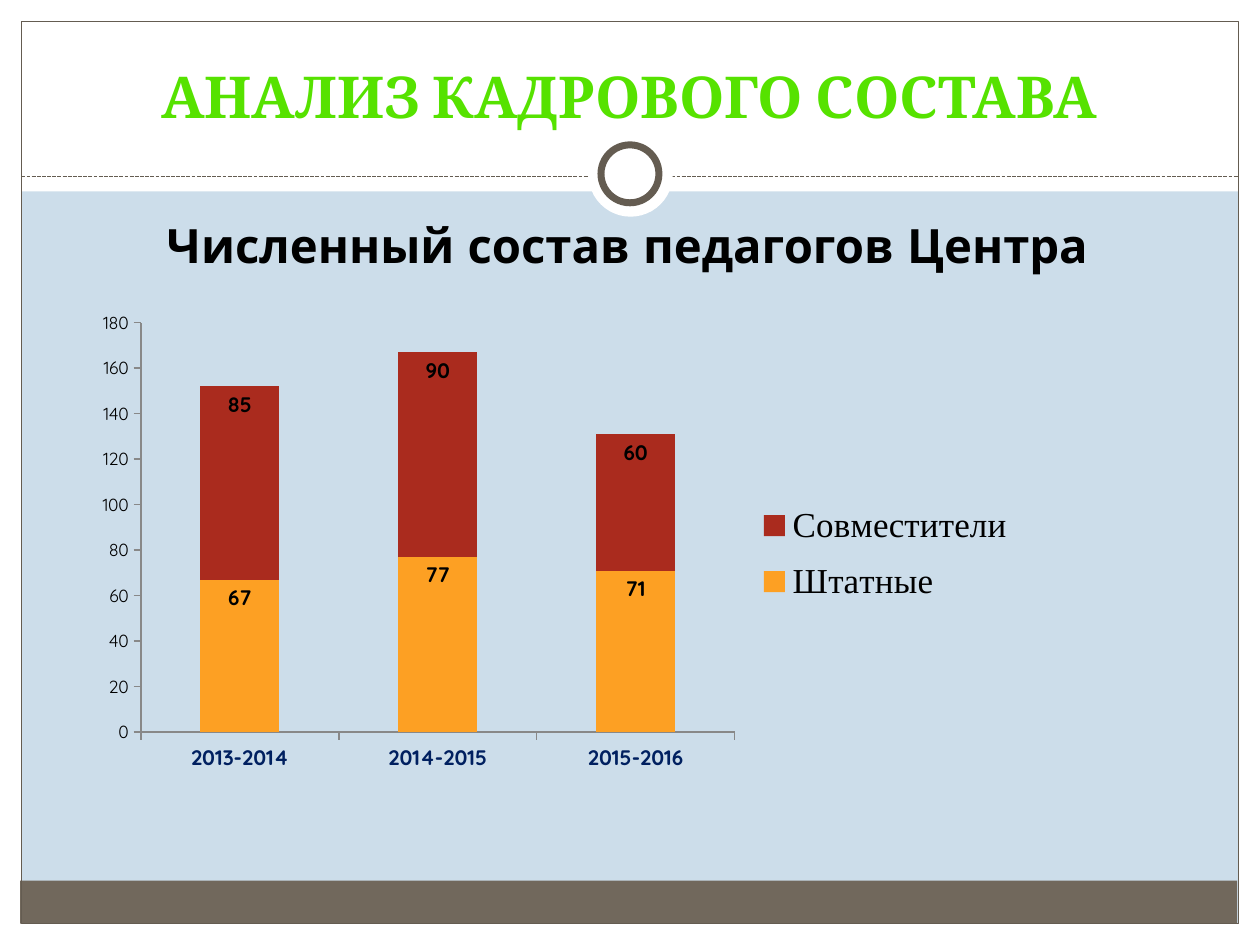
from pptx import Presentation
from pptx.chart.data import CategoryChartData
from pptx.dml.color import RGBColor
from pptx.enum.chart import XL_CHART_TYPE, XL_LABEL_POSITION, XL_LEGEND_POSITION, XL_TICK_MARK
from pptx.enum.dml import MSO_LINE
from pptx.enum.shapes import MSO_CONNECTOR, MSO_SHAPE
from pptx.enum.text import MSO_ANCHOR, PP_ALIGN
from pptx.oxml import parse_xml
from pptx.oxml.ns import nsdecls, qn
from pptx.util import Inches, Pt

RECT, OVAL = MSO_SHAPE.RECTANGLE, MSO_SHAPE.OVAL
STACKED = XL_CHART_TYPE.COLUMN_STACKED
INSIDE_END = XL_LABEL_POSITION.INSIDE_END
LEGEND_RIGHT = XL_LEGEND_POSITION.RIGHT
TICK_OUT = XL_TICK_MARK.OUTSIDE
CENTER = PP_ALIGN.CENTER

TITLE = "АНАЛИЗ КАДРОВОГО СОСТАВА"
SUBTITLE = "Численный состав педагогов Центра"
YEARS = ["2013-2014", "2014-2015", "2015-2016"]
STAFF = [
    ("Штатные", (67, 77, 71), "staff"),
    ("Совместители", (85, 90, 60), "part_time"),
]

THEME = {
    "color": {
        "background": "CCDDEA", "white": "FFFFFF", "footer": "71685C", "frame": "645C51",
        "title": "56E200", "text": "000000", "years": "002060", "axis": "888888",
        "staff": "FDA023", "part_time": "AA2B1E",
    },
    "font": {"title": "Cambria", "body": "Quicksand", "legend": "Times New Roman"},
    "size": {"title": 33, "subtitle": 27, "legend": 20, "label": 12, "axis": 10},
}

FRAME = [
    (RECT, (0, 7.33, 10, 0.17), "white", None),
    (RECT, (0, 0, 10, 1.52), "white", None),
    (RECT, (0, 0, 0.17, 7.5), "white", None),
    (RECT, (9.83, 0, 0.17, 7.5), "white", None),
    (RECT, (0.16, 6.99, 9.66, 0.34), "footer", None),
    (RECT, (0.17, 0.17, 9.66, 7.16), None, 0.75),
]
RING = [
    (OVAL, (4.67, 1.05, 0.67, 0.67), "white", None),
    (OVAL, (4.77, 1.15, 0.46, 0.46), "white", 4),
]
DIVIDER = (0.17, 1.4, 9.83, 1.4)
TITLE_BOX = (0.33, 0.25, 9.33, 0.83)
SUBTITLE_BOX = (0.33, 1.67, 9.3, 5)
CHART_BOX = (0.67, 2.41, 7.48, 3.78)
PLOT_LAYOUT = {"x": 0.06, "y": 0.04, "w": 0.63, "h": 0.86}
LEGEND_LAYOUT = {"x": 0.71, "y": 0.39, "w": 0.28, "h": 0.27}


def color(name):
    return RGBColor.from_string(THEME["color"][name])


def inches(values):
    return [Inches(value) for value in values]


def style_font(font, face, size, tint="text", bold=False):
    font.name = THEME["font"][face]
    font.size = Pt(THEME["size"][size])
    font.bold = bold
    font.color.rgb = color(tint)


def add_shapes(page, items):
    for kind, box, fill, line_width in items:
        shape = page.shapes.add_shape(kind, *inches(box))
        shape.shadow.inherit = False
        if fill:
            shape.fill.solid()
            shape.fill.fore_color.rgb = color(fill)
        else:
            shape.fill.background()
        if line_width:
            shape.line.color.rgb = color("frame")
            shape.line.width = Pt(line_width)
        else:
            shape.line.fill.background()


def add_divider(page):
    divider = page.shapes.add_connector(MSO_CONNECTOR.STRAIGHT, *inches(DIVIDER))
    divider.line.color.rgb = color("frame")
    divider.line.width = Pt(0.75)
    divider.line.dash_style = MSO_LINE.SQUARE_DOT
    divider.element.spPr.append(parse_xml(f"<a:effectLst {nsdecls('a')}/>"))


def write_text(shape, text, anchor, face, size, tint):
    frame = shape.text_frame
    frame.word_wrap = True
    frame.vertical_anchor = anchor
    para = frame.paragraphs[0]
    para.text = text
    para.alignment = CENTER
    style_font(para.font, face, size, tint, True)
    return para


def add_title(page):
    title = page.shapes.title
    title.left, title.top, title.width, title.height = inches(TITLE_BOX)
    page.shapes.element.append(title.element)
    write_text(title, TITLE, MSO_ANCHOR.BOTTOM, "title", "title", "title")


def add_subtitle(page):
    box = page.shapes.add_textbox(*inches(SUBTITLE_BOX))
    para = write_text(box, SUBTITLE, MSO_ANCHOR.TOP, "body", "subtitle", "text")
    para.space_before = Pt(5.4)


def manual_layout(area, inner=False):
    target = '<c:layoutTarget val="inner"/>' if inner else ""
    modes = "".join(f'<c:{side}Mode val="edge"/>' for side in "xy")
    sizes = "".join(f'<c:{key} val="{value}"/>' for key, value in area.items())
    return parse_xml(f"<c:layout {nsdecls('c')}><c:manualLayout>{target}{modes}{sizes}"
                     "</c:manualLayout></c:layout>")


def place_chart_parts(chart):
    plot_area = chart.element.find(".//" + qn("c:plotArea"))
    legend = chart.element.find(".//" + qn("c:legend"))
    for part in (plot_area, legend):
        for layout in part.findall(qn("c:layout")):
            part.remove(layout)
    plot_area.insert(0, manual_layout(PLOT_LAYOUT, True))
    legend.find(qn("c:legendPos")).addnext(manual_layout(LEGEND_LAYOUT))


def add_staff_chart(page):
    data = CategoryChartData()
    data.categories = YEARS
    for name, values, tint in STAFF:
        data.add_series(name, values)
    chart = page.shapes.add_chart(STACKED, *inches(CHART_BOX), data).chart
    chart.has_title = False
    style_font(chart.font, "body", "axis")

    plot = chart.plots[0]
    plot.gap_width, plot.overlap, plot.vary_by_categories = 150, 100, False
    for series, (name, values, tint) in zip(plot.series, STAFF):
        series.format.fill.solid()
        series.format.fill.fore_color.rgb = color(tint)
        labels = series.data_labels
        labels.show_value = True
        labels.position = INSIDE_END
        style_font(labels.font, "body", "label", bold=True)

    for axis in (chart.category_axis, chart.value_axis):
        axis.has_major_gridlines = False
        axis.major_tick_mark = TICK_OUT
        axis.format.line.color.rgb = color("axis")
    style_font(chart.category_axis.tick_labels.font, "body", "label", "years", True)
    style_font(chart.value_axis.tick_labels.font, "body", "axis")
    chart.value_axis.minimum_scale = 0
    chart.value_axis.maximum_scale = 180
    chart.value_axis.major_unit = 20

    chart.has_legend = True
    chart.legend.position = LEGEND_RIGHT
    chart.legend.include_in_layout = False
    style_font(chart.legend.font, "legend", "legend")
    place_chart_parts(chart)


def main():
    deck = Presentation()
    deck.slide_width, deck.slide_height = Inches(10), Inches(7.5)
    page = deck.slides.add_slide(deck.slide_layouts[5])
    page.background.fill.solid()
    page.background.fill.fore_color.rgb = color("background")
    add_shapes(page, FRAME)
    add_divider(page)
    add_shapes(page, RING)
    add_title(page)
    add_subtitle(page)
    add_staff_chart(page)
    deck.save("out.pptx")


if __name__ == "__main__":
    main()
